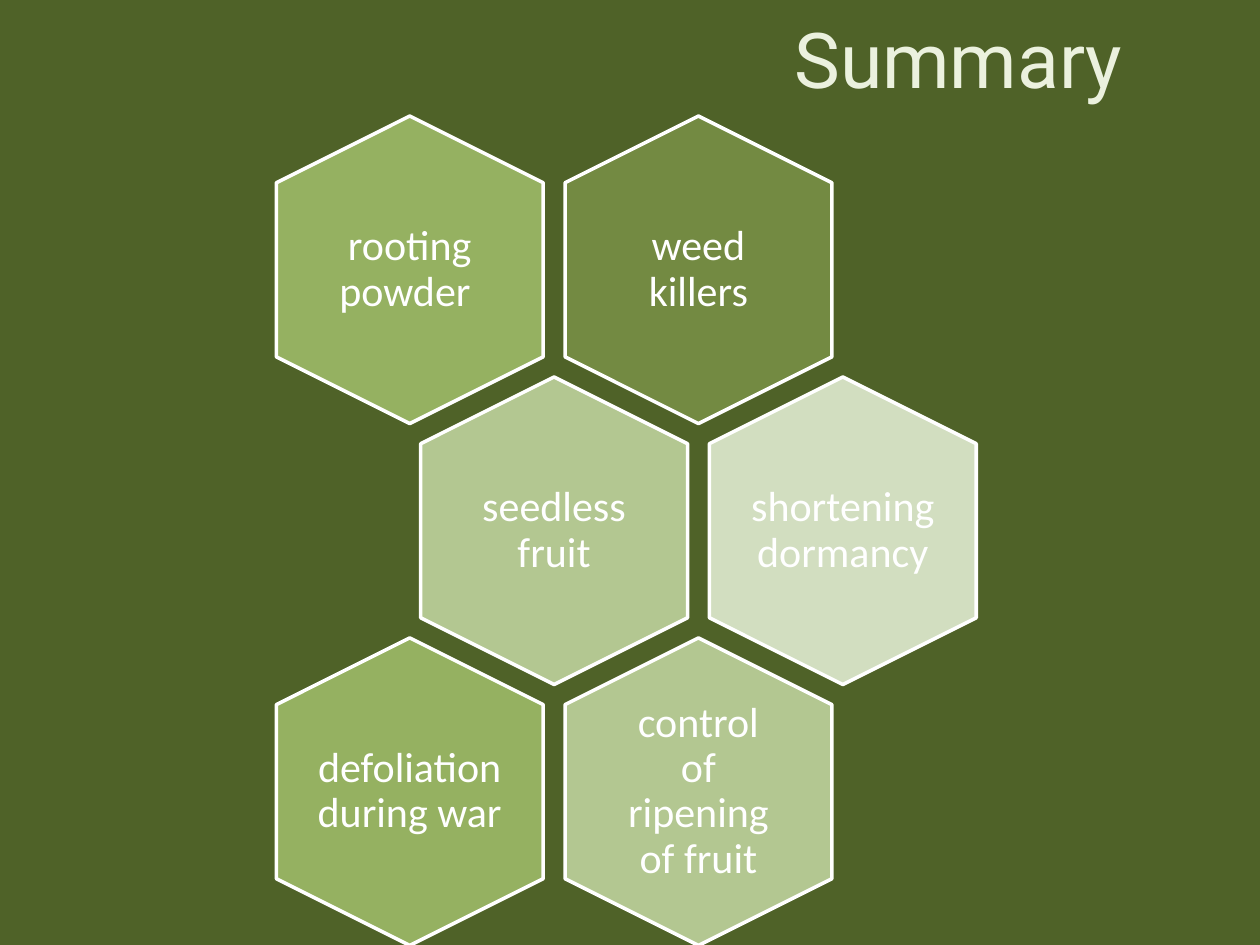
from dataclasses import dataclass

from pptx import Presentation
from pptx import util as u
from pptx.dml.color import RGBColor
from pptx.enum import shapes, text

BACKGROUND = RGBColor(0x4F, 0x62, 0x28)
TITLE_COLOR = RGBColor(0xEB, 0xF1, 0xDE)
WHITE = RGBColor(0xFF, 0xFF, 0xFF)
DARK = RGBColor(0x73, 0x8A, 0x42)
MEDIUM = RGBColor(0x95, 0xB1, 0x61)
LIGHT = RGBColor(0xB3, 0xC7, 0x91)
PALE = RGBColor(0xD2, 0xDE, 0xC0)

# Honeycomb geometry in cm; hexagons are rotated to stand on a point
CENTER_X, CENTER_Y = 8.26, 5.44
COL_STEP, ROW_STEP = 5.82, 5.26
HEX_W, HEX_H = 6.2, 5.38
LABEL_W, LABEL_H = 3.71, 4.27


@dataclass
class Cell:
    label: str
    row: int
    col: int
    fill: RGBColor
    inset: float = 0


CELLS = [
    Cell("weed killers", 0, 1, DARK, 0.25),
    Cell("rooting powder ", 0, 0, MEDIUM),
    Cell("seedless fruit", 1, 0, LIGHT, 0.25),
    Cell("shortening dormancy", 1, 1, PALE),
    Cell("control of ripening of fruit", 2, 1, LIGHT, 0.25),
    Cell("defoliation during war", 2, 0, MEDIUM),
]


def centered_box(x: float, y: float, w: float, h: float) -> list[u.Cm]:
    return [u.Cm(v) for v in (x - w / 2, y - h / 2, w, h)]


def style_text(tf, size: int, font: str, color: RGBColor) -> None:
    tf.word_wrap = True
    tf.vertical_anchor = text.MSO_ANCHOR.MIDDLE
    p = tf.paragraphs[0]
    p.alignment = text.PP_ALIGN.CENTER
    r = p.runs[0]
    r.font.size = u.Pt(size)
    r.font.name = font
    r.font.color.rgb = color


def draw_cell(s, cell: Cell) -> None:
    # Odd rows are shifted by half a column
    x = CENTER_X + (cell.col + cell.row % 2 / 2) * COL_STEP
    y = CENTER_Y + cell.row * ROW_STEP

    sp = s.shapes.add_shape(shapes.MSO_SHAPE.HEXAGON,
                            *centered_box(x, y, HEX_W, HEX_H))
    sp.adjustments[0] = 0.25
    sp.adjustments[1] = 1.1547
    sp.rotation = 90
    sp.shadow.inherit = False
    sp.fill.solid()
    sp.fill.fore_color.rgb = cell.fill
    sp.line.color.rgb = WHITE
    sp.line.width = u.Pt(2)

    # Upright label over the rotated hexagon
    tf = s.shapes.add_textbox(*centered_box(x, y, LABEL_W, LABEL_H)).text_frame
    tf.margin_left = tf.margin_right = u.Cm(cell.inset)
    tf.margin_top = tf.margin_bottom = u.Cm(cell.inset)
    tf.text = cell.label
    tf.paragraphs[0].line_spacing = 0.9
    style_text(tf, 24, "Calibri", WHITE)


def main() -> None:
    prs = Presentation()
    prs.slide_width, prs.slide_height = u.Cm(25.4), u.Cm(19.05)
    s = prs.slides.add_slide(prs.slide_layouts[5])
    s.background.fill.solid()
    s.background.fill.fore_color.rgb = BACKGROUND

    # Title
    title = s.shapes.title
    title.left, title.top = u.Cm(14.5), u.Cm(0)
    title.width, title.height = u.Cm(9.65), u.Cm(2.34)
    title.text_frame.text = "Summary"
    style_text(title.text_frame, 44, "Roboto", TITLE_COLOR)

    # Honeycomb
    for cell in CELLS:
        draw_cell(s, cell)

    prs.save("out.pptx")


if __name__ == "__main__":
    main()
